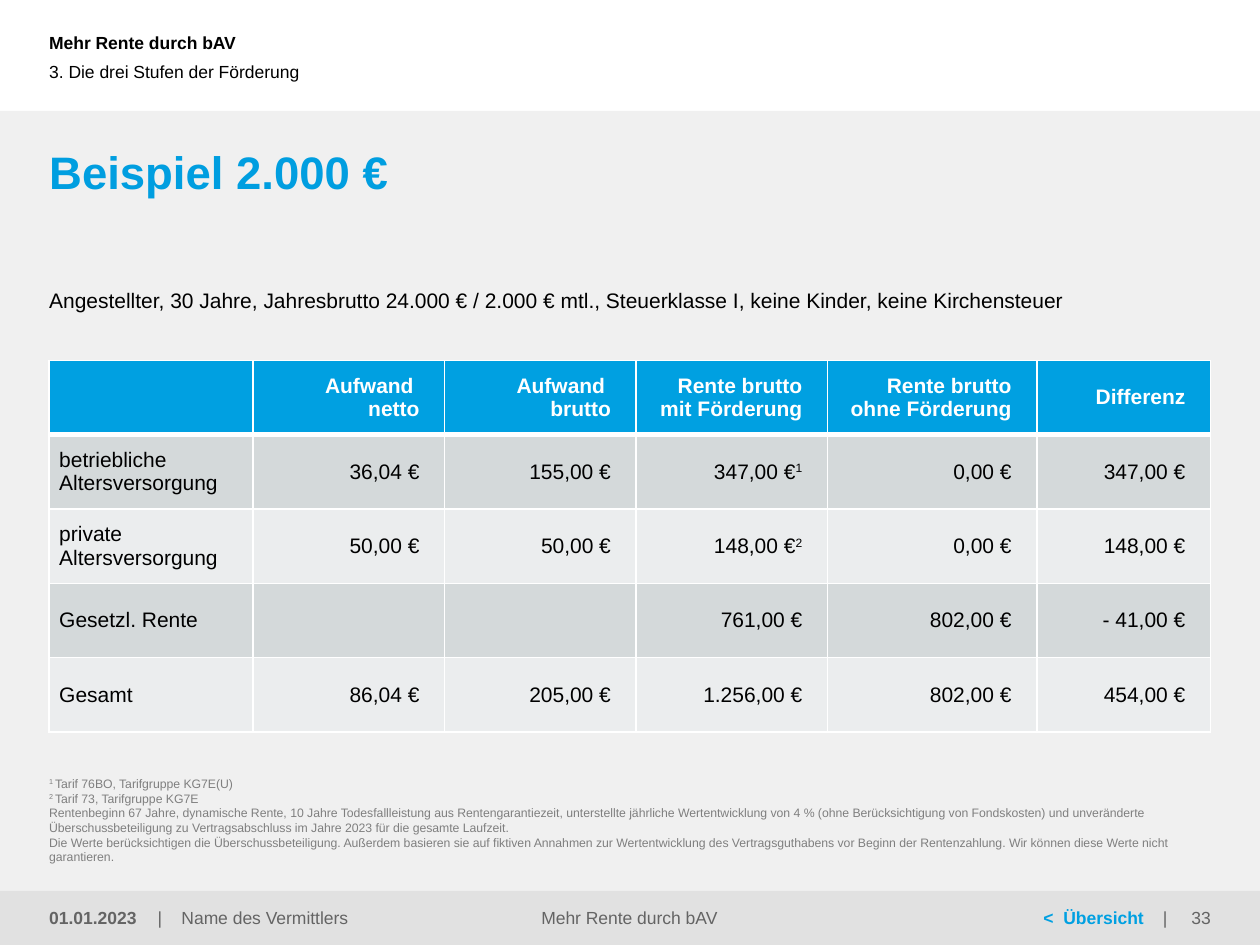
import pptx
import pptx.dml.color
import pptx.enum.shapes
import pptx.enum.text
import pptx.oxml
import pptx.oxml.ns
import pptx.util
from lxml import etree

RGBColor = pptx.dml.color.RGBColor
ALIGN = pptx.enum.text.PP_ALIGN
ANCHOR = pptx.enum.text.MSO_ANCHOR
qn = pptx.oxml.ns.qn

WHITE = RGBColor(0xFF, 0xFF, 0xFF)
BLACK = RGBColor(0, 0, 0)
BLUE = RGBColor(0x00, 0xA0, 0xE1)
TITLE_BLUE = RGBColor(0x00, 0x9E, 0xE0)
PANEL = RGBColor(0xF0, 0xF0, 0xF0)
FOOTER = RGBColor(0xE1, 0xE1, 0xE1)
GREY = RGBColor(0x64, 0x64, 0x64)
NOTE_GREY = RGBColor(0x7F, 0x7F, 0x7F)
BANDS = (RGBColor(0xD4, 0xD9, 0xDA), RGBColor(0xEB, 0xED, 0xEE))

MARGIN = 3.9
CONTENT = 92.2
FOOT_TOP, FOOT_HEIGHT = 70.7, 4.3
NO_INSET = (0, 0, 0, 0)
HEAD_INSET = (0.39, 0.05, 0.1, 0.05)


class Deck:
    font = "Arial"
    columns, rows = 100, 75

    def __init__(self):
        self.prs = pptx.Presentation()
        self.prs.slide_width = pptx.util.Inches(10)
        self.prs.slide_height = pptx.util.Inches(7.5)
        self.s = self.prs.slides.add_slide(self.prs.slide_layouts[6])

    def x(self, n):
        return round(self.prs.slide_width * n / self.columns)

    def y(self, n):
        return round(self.prs.slide_height * n / self.rows)

    def box(self, left, top, width, height):
        return self.x(left), self.y(top), self.x(width), self.y(height)

    def band(self, top, height, color):
        kind = pptx.enum.shapes.MSO_SHAPE.RECTANGLE
        sp = self.s.shapes.add_shape(kind, *self.box(0, top, self.columns, height))
        sp.shadow.inherit = False
        sp.fill.solid()
        sp.fill.fore_color.rgb = color
        sp.line.fill.background()

    def style(self, r, size, color, bold):
        r.font.name = self.font
        r.font.size = pptx.util.Pt(size)
        r.font.bold = bold
        r.font.color.rgb = color

    def paragraph(self, p, text, size, color, bold=False, align=ALIGN.LEFT):
        p.alignment = align
        plain, *rest = text.split("^")
        p.text = plain
        for i, part in enumerate(rest):
            r = p.add_run()
            r.text = part
            if i % 2 == 0:
                r.font._element.set("baseline", "30000")
        for r in p.runs:
            self.style(r, size, color, bold)
        for br in p._p.findall(qn("a:br")):
            etree.SubElement(br, qn("a:rPr")).set("sz", str(size * 100))

    def tabs(self, p, stops):
        tab_list = etree.SubElement(p._p.get_or_add_pPr(), qn("a:tabLst"))
        for stop in stops:
            tab = etree.SubElement(tab_list, qn("a:tab"))
            tab.set("pos", str(self.x(stop)))
            tab.set("algn", "l")

    def inset(self, target, margins):
        target.margin_left, target.margin_top, target.margin_right, \
            target.margin_bottom = map(pptx.util.Inches, margins)

    def text(self, box, lines, size, color, bold=False, align=ALIGN.LEFT,
             anchor=ANCHOR.MIDDLE, inset=NO_INSET, stops=()):
        tf = self.s.shapes.add_textbox(*self.box(*box)).text_frame
        tf.word_wrap = True
        tf.vertical_anchor = anchor
        self.inset(tf, inset)
        for i, line in enumerate(lines):
            p = tf.add_paragraph() if i else tf.paragraphs[0]
            if stops:
                self.tabs(p, stops)
            self.paragraph(p, line, size, color, bold, align)
        return tf

    def borders(self, cell, top, bottom):
        tc_pr = cell._tc.get_or_add_tcPr()
        widths = {"lnL": 1, "lnR": 1, "lnT": top, "lnB": bottom}
        for i, (tag, width) in enumerate(widths.items()):
            ln = pptx.oxml.parse_xml(
                f'<a:{tag} {pptx.oxml.ns.nsdecls("a")} w="{width * 12700}">'
                f'<a:solidFill><a:srgbClr val="{WHITE}"/></a:solidFill></a:{tag}>')
            tc_pr.insert(i, ln)

    def table(self, box, widths, data):
        frame = self.s.shapes.add_table(len(data), len(widths), *self.box(*box))
        table = frame.table
        table.horz_banding = False
        for column, width in zip(table.columns, widths):
            column.width = self.x(width)
        for i, row in enumerate(data):
            table.rows[i].height = self.y(box[3] / len(data))
            header = i == 0
            for j, value in enumerate(row):
                cell = table.cell(i, j)
                cell.fill.solid()
                cell.fill.fore_color.rgb = BLUE if header else BANDS[(i - 1) % 2]
                cell.vertical_anchor = ANCHOR.MIDDLE
                self.inset(cell, (0.08, 0.08, 0.2 if j else 0.08, 0.08))
                self.borders(cell, 3 if i == 1 else 1, 3 if header else 1)
                if value:
                    self.paragraph(cell.text_frame.paragraphs[0], value, 12,
                                   WHITE if header else BLACK, header,
                                   ALIGN.RIGHT if j else ALIGN.LEFT)


def main():
    deck = Deck()
    deck.band(8.8, 66.2, PANEL)
    deck.band(FOOT_TOP, FOOT_HEIGHT, FOOTER)

    deck.text((0, 0, 69.8, 6.7), ["Mehr Rente durch bAV"], 10, BLACK, True,
              inset=HEAD_INSET)
    deck.text((0, 2.5, 71.5, 6.3), ["3. Die drei Stufen der Förderung"], 10, BLACK,
              inset=(0.39, 0, 0, 0))
    deck.text((MARGIN, 11.4, CONTENT, 5.5), ["Beispiel 2.000 €"], 26, TITLE_BLUE,
              True, anchor=ANCHOR.TOP)
    deck.text((MARGIN, 22.8, CONTENT, 2.9),
              ["Angestellter, 30 Jahre, Jahresbrutto 24.000 € / 2.000 € mtl., "
               "Steuerklasse I, keine Kinder, keine Kirchensteuer"],
              12, BLACK, anchor=ANCHOR.TOP)

    deck.table((MARGIN, 28.6, CONTENT, 29.5), (16.2, 15.2, 15.2, 15.2, 16.6, 13.8), [
        ("", "Aufwand \nnetto", "Aufwand \nbrutto", "Rente brutto mit Förderung",
         "Rente brutto ohne Förderung", "Differenz"),
        ("betriebliche Altersversorgung", "36,04 €", "155,00 €", "347,00 €^1",
         "0,00 €", "347,00 €"),
        ("private \nAltersversorgung", "50,00 €", "50,00 €", "148,00 €^2",
         "0,00 €", "148,00 €"),
        ("Gesetzl. Rente", "", "", "761,00 €", "802,00 €", "- 41,00 €"),
        ("Gesamt", "86,04 €", "205,00 €", "1.256,00 €", "802,00 €", "454,00 €"),
    ])

    notes = deck.text((MARGIN, 67.4, 92.1, 1.2), [
        "^1 ^Tarif 76BO, Tarifgruppe KG7E(U)",
        "^2 ^Tarif 73, Tarifgruppe KG7E",
        "Rentenbeginn 67 Jahre, dynamische Rente, 10 Jahre Todesfallleistung aus "
        "Rentengarantiezeit, unterstellte jährliche Wertentwicklung von 4 % (ohne "
        "Berücksichtigung von Fondskosten) und unveränderte Überschussbeteiligung zu "
        "Vertragsabschluss im Jahre 2023 für die gesamte Laufzeit.\n"
        "Die Werte berücksichtigen die Überschussbeteiligung. Außerdem basieren sie "
        "auf fiktiven Annahmen zur Wertentwicklung des Vertragsguthabens vor Beginn "
        "der Rentenzahlung. Wir können diese Werte nicht garantieren.",
    ], 7, NOTE_GREY, anchor=ANCHOR.BOTTOM)
    for p in notes.paragraphs[:2]:
        p_pr = p._p.get_or_add_pPr()
        p_pr.set("marL", str(deck.x(1)))
        p_pr.set("indent", str(-deck.x(1)))

    def footer(left, width, line, **options):
        return deck.text((left, FOOT_TOP, width, FOOT_HEIGHT), [line], 10, GREY,
                         **options)

    footer(0, 12.2, "01.01.2023", bold=True, inset=HEAD_INSET)
    footer(12.5, 24.2, "|\tName des Vermittlers", stops=(1.9,))
    footer(29.3, 41.3, "Mehr Rente durch bAV", align=ALIGN.CENTER)
    tf = footer(68.8, 24.2, "\t<\tÜbersicht", stops=(14, 15.6, 23.5))
    p = tf.paragraphs[0]
    deck.style(p.runs[0], 10, BLUE, True)
    r = p.add_run()
    r.text = "\t|"
    deck.style(r, 10, GREY, False)
    footer(90.6, 9.4, "33", align=ALIGN.RIGHT, inset=(0.1, 0.05, 0.39, 0.05))

    deck.prs.save("out.pptx")


if __name__ == "__main__":
    main()
